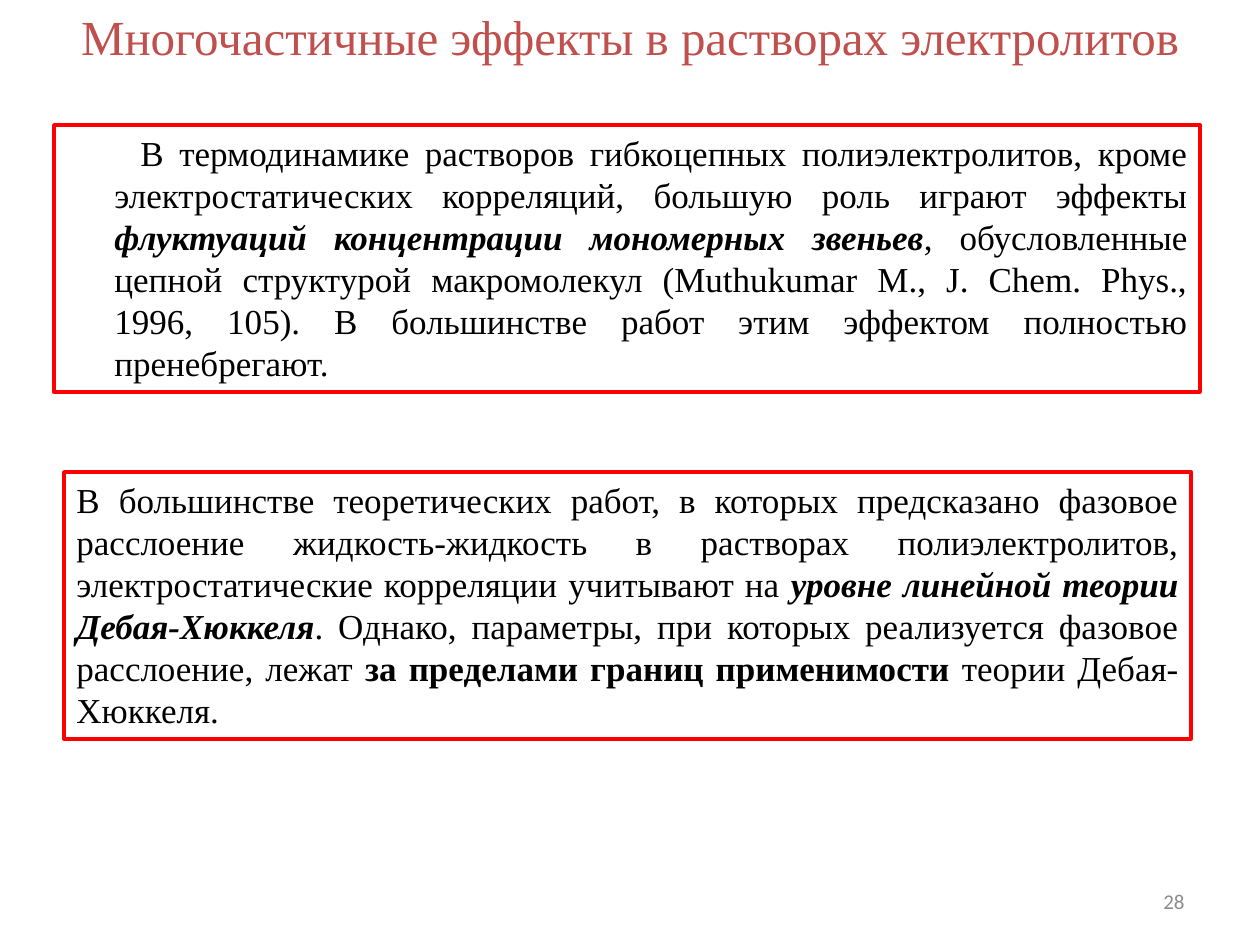
from pptx import Presentation
from pptx.dml.color import RGBColor
from pptx.enum.shapes import MSO_SHAPE as Shape
from pptx.enum.text import MSO_ANCHOR as Anchor, PP_ALIGN as Align
from pptx.util import Emu, Pt

SCALE = 914400 / 126
RED = RGBColor(255, 0, 0)
BRICK = RGBColor(0xC0, 0x50, 0x4D)
BLACK = RGBColor(0, 0, 0)
GREY = RGBColor(0x8C, 0x8C, 0x8C)
SERIF = "Times New Roman"
SANS = "Calibri"


def px(num):
    return Emu(round(num * SCALE))


def write(frame, parts, size=20, font=SERIF, color=BLACK, align=Align.JUSTIFY,
          anchor=Anchor.TOP, left=0, first=0):
    frame.word_wrap = True
    frame.vertical_anchor = anchor
    para = frame.paragraphs[0]
    para.alignment = align
    if left:
        props = para._p.get_or_add_pPr()
        props.set("marL", str(px(left)))
        props.set("indent", str(px(first)))
    for text, style in parts:
        run = para.add_run()
        run.text = text
        run.font.name = font
        run.font.size = Pt(size)
        run.font.color.rgb = color
        run.font.bold = "b" in style
        run.font.italic = "i" in style


class Deck:
    line = RED
    width = Pt(2)

    def __init__(self, wide, high):
        self.file = Presentation()
        self.file.slide_width = px(wide)
        self.file.slide_height = px(high)
        self.slide = self.file.slides.add_slide(self.file.slide_layouts[6])

    def label(self, area, text, **form):
        box = self.slide.shapes.add_textbox(*map(px, area))
        write(box.text_frame, [(text, "")], **form)

    def panel(self, area, parts, **form):
        box = self.slide.shapes.add_shape(Shape.RECTANGLE, *map(px, area))
        box.shadow.inherit = False
        box.fill.background()
        box.line.color.rgb = self.line
        box.line.width = self.width
        write(box.text_frame, parts, **form)


def main():
    deck = Deck(1260, 945)
    deck.label((0, 0, 1260, 72), "Многочастичные эффекты в растворах электролитов",
               size=28, color=BRICK, align=Align.CENTER)
    deck.panel((54, 125, 1146, 267), [
        ("В термодинамике растворов гибкоцепных полиэлектролитов, кроме "
         "электростатических корреляций, большую роль играют эффекты ", ""),
        ("флуктуаций концентрации мономерных звеньев", "bi"),
        (", обусловленные цепной структурой макромолекул (Muthukumar M., "
         "J. Chem. Phys., 1996, 105). В большинстве работ этим эффектом "
         "полностью пренебрегают.", ""),
    ], left=48, first=26)
    deck.panel((64, 472, 1127, 267), [
        ("В большинстве теоретических работ, в которых предсказано фазовое "
         "расслоение жидкость-жидкость в растворах полиэлектролитов, "
         "электростатические корреляции учитывают на", ""),
        (" уровне линейной теории Дебая-Хюккеля", "bi"),
        (". Однако, параметры, при которых реализуется фазовое расслоение, лежат ", ""),
        ("за пределами границ применимости", "b"),
        (" теории Дебая-Хюккеля.", ""),
    ])
    deck.label((903, 876, 294, 50), "28", size=12, font=SANS, color=GREY,
               align=Align.RIGHT, anchor=Anchor.MIDDLE)
    deck.file.save("out.pptx")


if __name__ == "__main__":
    main()
